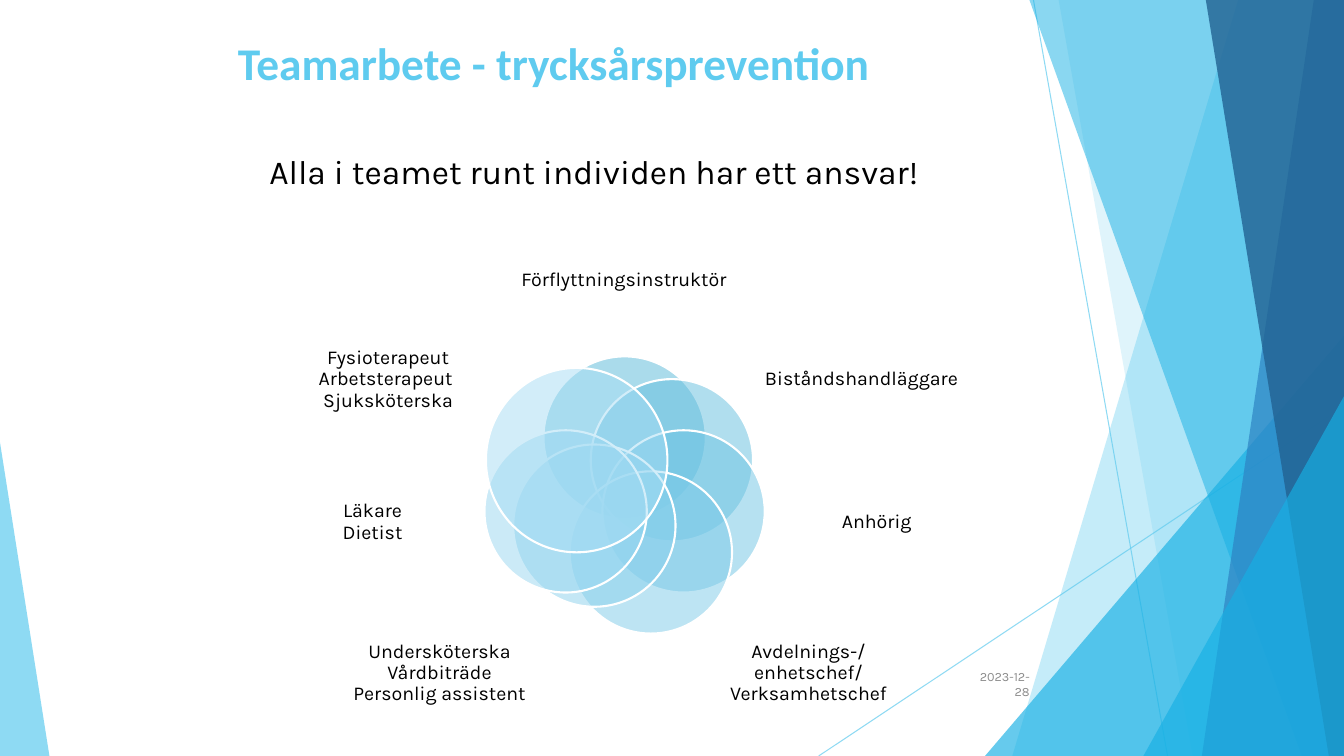
import math
import pptx
import pptx.util
import pptx.dml.color
import pptx.enum.shapes
import pptx.enum.text
import pptx.oxml.ns
import pptx.oxml.xmlchemy

W, H = 13.33, 7.5
SHAPE = pptx.enum.shapes.MSO_SHAPE
ALIGN = pptx.enum.text.PP_ALIGN
ANCHOR = pptx.enum.text.MSO_ANCHOR
SKY, CYAN, BLUE, NAVY = "5FCBEF", "17B0E4", "2E83C3", "226292"

# Content
TITLE = "Teamarbete - trycksårsprevention"
MESSAGE = "Alla i teamet runt individen har ett ansvar!"
DATE = "2023-12-28"
# Role, label box (left, top, width, height), circle colour
ROLES = [
    ("Förflyttningsinstruktör", (5.09, 2.28, 2.2, 0.99), "56B8D9"),
    ("Biståndshandläggare", (7.54, 3.22, 2.01, 1.09), "63BEDF"),
    ("Anhörig", (7.84, 4.6, 1.71, 1.16), "6FC5E4"),
    ("Avdelnings-/ enhetschef/ Verksamhetschef", (7.1, 6.15, 1.84, 1.06), "7DCBE9"),
    ("Undersköterska\vVårdbiträde\vPersonlig assistent", (3.44, 6.15, 1.84, 1.06), "8AD1ED"),
    ("Läkare\vDietist", (2.84, 4.6, 1.71, 1.16), "98D7F1"),
    ("Fysioterapeut\vArbetsterapeut \vSjuksköterska", (2.98, 3.22, 1.74, 1.09), "A7DDF4"),
]
# Ring of circles; two circles are placed off the ring
RING_X, RING_Y, RING_R, CIRCLE = 6.195, 4.94, 0.6, 1.61
OFF_RING = {4: (5.09, 4.41, CIRCLE, CIRCLE), 6: (4.82, 3.65, 1.8, 1.83)}

# Background: lines (from, to), facets (top x, bottom x), triangles (left, top, width, apex)
LINES = [((10.25, 0), (11.58, H)), ((W, 4.03), (8.12, H))]
FACETS = [
    ("facet", (12.28, 10.04), SKY, 36),
    ("facet", (10.5, 11.83), SKY, 20),
    ("triangle", (9.77, 3.33, 3.56, 1), CYAN, 66),
    ("facet", (10.21, 12.91), CYAN, 50),
    ("facet", (13.03, 11.92), BLUE, 70),
    ("facet", (11.96, 13.18), NAVY, 80),
    ("triangle", (11.34, 3.93, 1.99, 1), CYAN, 66),
    ("triangle", (0, 4.39, 0.49, 0), SKY, 70),
]

prs = pptx.Presentation()
prs.slide_width, prs.slide_height = pptx.util.Inches(W), pptx.util.Inches(H)
s = prs.slides.add_slide(prs.slide_layouts[6])


def inches(*values):
    return [pptx.util.Inches(v) for v in values]


def rgb(code):
    return pptx.dml.color.RGBColor.from_string(code)


def set_alpha(fill, percent):
    """Make a solid fill see-through."""
    color = fill._xPr.find(pptx.oxml.ns.qn("a:solidFill"))[0]
    alpha = pptx.oxml.xmlchemy.OxmlElement("a:alpha")
    alpha.set("val", str(percent * 1000))
    color.append(alpha)


def paint(sp, color, opacity, outline=None):
    sp.shadow.inherit = False
    sp.fill.solid()
    sp.fill.fore_color.rgb = rgb(color)
    set_alpha(sp.fill, opacity)
    if outline:
        sp.line.color.rgb = rgb(outline)
        sp.line.width = pptx.util.Pt(1.5)
    else:
        sp.line.fill.background()


def add_text(text, box, size, color="000000", font="Karla", align=ALIGN.CENTER,
             bold=False, inset=0, spacing=None):
    tf = s.shapes.add_textbox(*inches(*box)).text_frame
    tf.word_wrap = True
    tf.vertical_anchor = ANCHOR.MIDDLE
    tf.margin_left = tf.margin_right = pptx.util.Inches(inset)
    tf.margin_top = tf.margin_bottom = pptx.util.Inches(inset / 2)
    p = tf.paragraphs[0]
    p.text = text
    p.alignment = align
    if spacing:
        p.line_spacing = spacing
    p.font.name, p.font.size, p.font.bold = font, pptx.util.Pt(size), bold
    p.font.color.rgb = rgb(color)


# Background lines
for start, end in LINES:
    line = s.shapes.add_connector(
        pptx.enum.shapes.MSO_CONNECTOR.STRAIGHT, *inches(*start, *end))
    line.line.color.rgb = rgb(SKY)
    line.line.width = pptx.util.Pt(0.75)
    set_alpha(line.line.fill, 70)
    line._element.spPr.append(pptx.oxml.xmlchemy.OxmlElement("a:effectLst"))

# Background facets
for kind, place, color, opacity in FACETS:
    if kind == "facet":
        top_x, bottom_x = place
        outline = s.shapes.build_freeform(*inches(top_x, 0))
        outline.add_line_segments(
            [inches(W, 0), inches(W, H), inches(bottom_x, H)], close=True)
        sp = outline.convert_to_shape()
    else:
        left, top, width, apex = place
        sp = s.shapes.add_shape(SHAPE.ISOSCELES_TRIANGLE,
                                *inches(left, top, width, H - top))
        sp.adjustments[0] = apex
    paint(sp, color, opacity)

# Title
add_text(TITLE, (2.26, 0.3, 10.39, 0.64), 32.4, SKY, "Calibri", ALIGN.LEFT, True, 0.1)

# Circles and role labels
for i, (role, box, color) in enumerate(ROLES):
    angle = 2 * math.pi * i / len(ROLES)
    on_ring = (RING_X + RING_R * math.sin(angle) - CIRCLE / 2,
               RING_Y - RING_R * math.cos(angle) - CIRCLE / 2, CIRCLE, CIRCLE)
    sp = s.shapes.add_shape(SHAPE.OVAL, *inches(*OFF_RING.get(i, on_ring)))
    paint(sp, color, 50, "FFFFFF")
    add_text(role, box, 14, spacing=0.9)

# Message and date
add_text(MESSAGE, (0.8, 1.1, 10.18, 1.2), 24, inset=0.1)
add_text(DATE, (9.49, 6.64, 0.82, 0.29), 9, "8C8C8C", align=ALIGN.RIGHT, inset=0.1)

prs.save("out.pptx")
